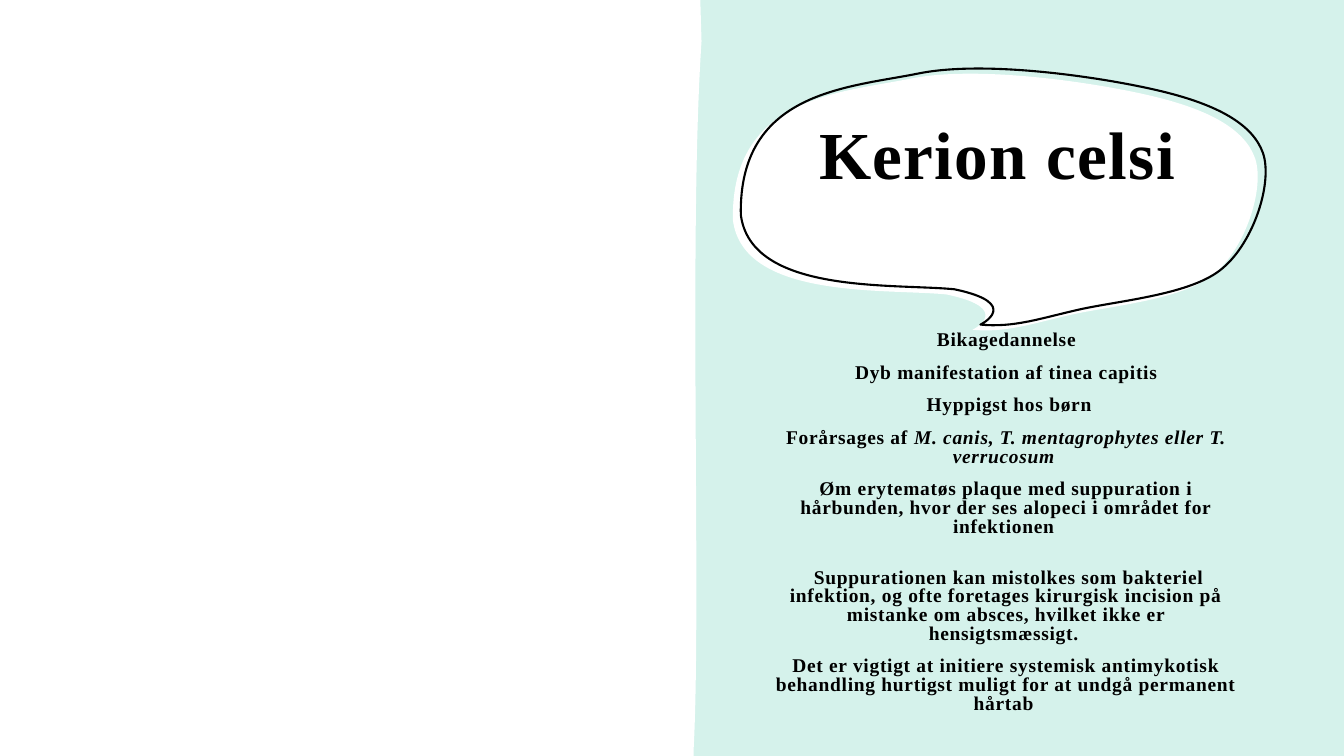
import lxml.etree
import pptx
import pptx.dml.color
import pptx.enum.shapes
import pptx.enum.text
import pptx.oxml.ns
import pptx.util

Cm = pptx.util.Cm
Pt = pptx.util.Pt
qn = pptx.oxml.ns.qn
MINT = pptx.dml.color.RGBColor(0xD5, 0xF2, 0xEB)
WHITE = pptx.dml.color.RGBColor(0xFF, 0xFF, 0xFF)
BLACK = pptx.dml.color.RGBColor(0, 0, 0)


def paint(shape, fill=None, line=None):
    shape.shadow.inherit = False
    for part, color in ((shape.fill, fill), (shape.line.fill, line)):
        if color is None:
            part.background()
        else:
            part.solid()
            part.fore_color.rgb = color


def draw(start, steps, dx=0, dy=0):
    """Closed outline in cm; a step of one point is a line, of three a curve."""
    steps = [[(Cm(x + dx), Cm(y + dy)) for x, y in step] for step in steps]
    pen = slide.shapes.build_freeform(Cm(start[0] + dx), Cm(start[1] + dy))
    pen.add_line_segments([step[-1] for step in steps], close=True)
    shape = pen.convert_to_shape()
    # Turn the lines of three-point steps into cubic curves
    for node, step in zip(list(shape._element.iter(qn("a:lnTo"))), steps):
        if len(step) == 3:
            node.tag = qn("a:cubicBezTo")
            node.remove(node[0])
            for x, y in step:
                spot = lxml.etree.SubElement(node, qn("a:pt"))
                spot.set("x", str(x - shape.left))
                spot.set("y", str(y - shape.top))
    return shape


deck = pptx.Presentation()
deck.slide_width, deck.slide_height = Cm(33.87), Cm(19.05)
slide = deck.slides.add_slide(deck.slide_layouts[6])
slide.background.fill.solid()
slide.background.fill.fore_color.rgb = MINT

# Mint ground and white panel with a wavy right edge
ground = slide.shapes.add_shape(pptx.enum.shapes.MSO_SHAPE.RECTANGLE,
                                0, 0, deck.slide_width, deck.slide_height)
paint(ground, fill=MINT)
panel = draw((17.48, 19.05), [
    [(0, 19.05)], [(0, 0)], [(17.65, 0)], [(17.68, 1.04)],
    [(17.35, 5.99), (17.68, 15.16), (17.48, 18.9)],
])
paint(panel, fill=WHITE)

# Speech bubble: white body, then the black outline set off from it
tail = (24.71, 8.18)
curves = [
    [(25.55, 8.26), (26.19, 8.03), (27.2, 7.8)],
    [(28.24, 7.57), (30.05, 7.42), (30.81, 6.76)],
    [(31.6, 6.1), (32.08, 4.6), (31.83, 3.86)],
    [(31.57, 3.12), (30.66, 2.64), (29.31, 2.31)],
    [(27.97, 1.98), (24.92, 1.5), (23.16, 1.85)],
    [(21.39, 2.21), (18.62, 2.29), (18.67, 5.41)],
    [(18.92, 7.42), (22.5, 7.14), (24.05, 7.29)],
    [(25.78, 7.65), tail, tail],
]
paint(draw(tail, curves, -0.2, 0.13), fill=WHITE)
ring = draw(tail, curves)
paint(ring, line=BLACK)
ring.line.width = Pt(1.5)

# Text: each paragraph is its space before and its runs (text, italic)
title = [(0, [("Kerion celsi ", False)])]
facts = [
    (10, [("Bikagedannelse", False)]),
    (10, [("Dyb manifestation af tinea capitis", False)]),
    (10, [(" Hyppigst hos børn", False)]),
    (10, [("Forårsages af ", False),
          ("M. canis, T. mentagrophytes eller T. verrucosum ", True)]),
    (10, [("Øm erytematøs plaque med suppuration i hårbunden, hvor der ses "
           "alopeci i området for infektionen ", False)]),
    (23, [(" Suppurationen kan mistolkes som bakteriel infektion, og ofte foretages "
           "kirurgisk incision på mistanke om absces, hvilket ikke er "
           "hensigtsmæssigt. ", False)]),
    (10, [("Det er vigtigt at initiere systemisk antimykotisk behandling hurtigst "
           "muligt for at undgå permanent hårtab ", False)]),
]
blocks = [
    (title, (19.94, 2.64, 10.85, 4.42), 48, 1, 100, 0.19),
    (facts, (19.28, 8.23, 12.17, 10.49), 13.9, 0.8, 50, 0.13),
]
for paras, place, size, pitch, track, inset in blocks:
    frame = slide.shapes.add_textbox(*map(Cm, place)).text_frame
    frame.word_wrap = True
    frame.margin_top = Cm(inset)
    style = {"name": "Times New Roman", "size": Pt(size), "bold": True}
    for spot, (gap, runs) in enumerate(paras):
        para = frame.add_paragraph() if spot else frame.paragraphs[0]
        form = {"alignment": pptx.enum.text.PP_ALIGN.CENTER,
                "line_spacing": pitch, "space_before": Pt(gap)}
        for name, value in form.items():
            setattr(para, name, value)
        for text, slant in runs:
            run = para.add_run()
            run.text = text
            for name, value in {**style, "italic": slant}.items():
                setattr(run.font, name, value)
            run.font.color.rgb = BLACK
            # Letter spacing in hundredths of a point
            run._r.get_or_add_rPr().set("spc", str(track))

deck.save("out.pptx")
